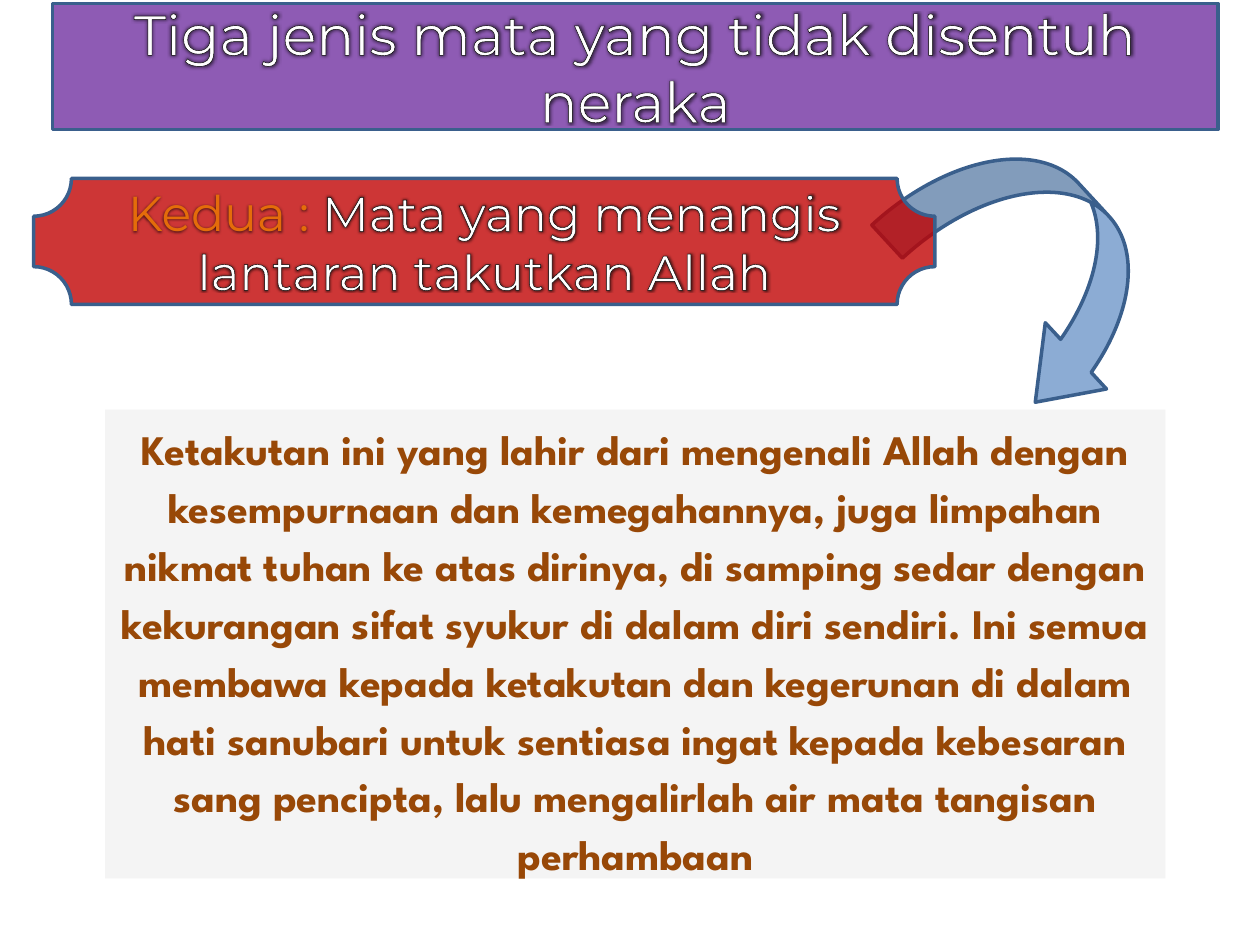
from lxml.etree import SubElement
from pptx import Presentation
from pptx.dml.color import RGBColor
from pptx.enum.shapes import MSO_SHAPE as Shape
from pptx.enum.text import MSO_ANCHOR as Anchor, MSO_AUTO_SIZE as AutoSize, PP_ALIGN as Align
from pptx.oxml import parse_xml
from pptx.oxml.ns import nsdecls, qn
from pptx.util import Pt

# Content
HEADING = "Tiga jenis mata yang tidak disentuh neraka"
KIND_LABEL, KIND_TEXT = "Kedua : ", "Mata yang menangis lantaran takutkan Allah"
EXPLANATION = (
    "Ketakutan ini yang lahir dari mengenali Allah dengan kesempurnaan dan kemegahannya, "
    "juga limpahan nikmat tuhan ke atas dirinya, di samping sedar dengan kekurangan sifat "
    "syukur di dalam diri sendiri. Ini semua membawa kepada ketakutan dan kegerunan di dalam "
    "hati sanubari untuk sentiasa ingat kepada kebesaran sang pencipta, lalu mengalirlah air "
    "mata tangisan perhambaan"
)

THEME = {
    "heading_font": "Montserrat", "body_font": "League Spartan",
    "heading_size": 32, "kind_size": 28, "body_size": 24,
    "purple": "7030A0", "red": "C00000", "blue": "4F81BD", "panel": "F2F2F2",
    "border": "3A5F8C", "white": "FFFFFF", "orange": "E46C0A", "brown": "984807",
    "outline": "000000",
}

# Left, top, width, height in points
SLIDE_SIZE = (720, 540)
HEADING_BOX = (30, 2, 666, 72)
KIND_BOX = (19.25, 102, 515, 72)
ARROW_BOX = (540, 72, 103, 163.5)
PANEL_BOX = (60, 234, 606, 275)


def place(shape, box):
    shape.left, shape.top, shape.width, shape.height = map(Pt, box)


def paint(shape, color, opacity, border=None):
    shape.fill.solid()
    shape.fill.fore_color.rgb = RGBColor.from_string(THEME[color])
    tint = shape.fill._xPr.find(f".//{qn('a:srgbClr')}")
    SubElement(tint, qn("a:alpha"), val=str(opacity * 1000))
    if border:
        shape.line.color.rgb = RGBColor.from_string(THEME[border])
        shape.line.width = Pt(2)


def write(paragraph, text, *, font, size, color, bold=False, outlined=False):
    run = paragraph.add_run()
    run.text = text
    run.font.name, run.font.size, run.font.bold = THEME[font], Pt(THEME[size]), bold
    run.font.color.rgb = RGBColor.from_string(THEME[color])
    if outlined:
        props = run._r.get_or_add_rPr()
        ink = f'<a:srgbClr val="{THEME["outline"]}"'
        props.insert(0, parse_xml(
            f'<a:ln {nsdecls("a")} w="{Pt(0.75)}"><a:solidFill>{ink}/></a:solidFill></a:ln>'))
        props.insert(2, parse_xml(
            f'<a:effectLst {nsdecls("a")}><a:glow rad="{Pt(3)}">{ink}>'
            '<a:alpha val="60000"/></a:srgbClr></a:glow></a:effectLst>'))


def centre(shape, anchor, auto_size=AutoSize.NONE):
    frame = shape.text_frame
    frame.word_wrap, frame.auto_size, frame.vertical_anchor = True, auto_size, anchor
    frame.paragraphs[0].alignment = Align.CENTER
    return frame.paragraphs[0]


def add_shape(slide, preset, box):
    shape = slide.shapes.add_shape(preset, *map(Pt, box))
    shape.shadow.inherit = False
    return shape


def main():
    deck = Presentation()
    deck.slide_width, deck.slide_height = map(Pt, SLIDE_SIZE)
    slide = deck.slides.add_slide(deck.slide_layouts[1])
    heading, panel = slide.placeholders

    # Heading: the title placeholder shaped as a plaque
    place(heading, HEADING_BOX)
    heading._element.spPr.append(parse_xml(
        f'<a:prstGeom {nsdecls("a")} prst="plaque"><a:avLst>'
        '<a:gd name="adj" fmla="val 50000"/></a:avLst></a:prstGeom>'))
    paint(heading, "purple", 79, "border")
    write(centre(heading, Anchor.MIDDLE), HEADING, font="heading_font",
          size="heading_size", color="white", outlined=True)

    # Explanation panel
    place(panel, PANEL_BOX)
    paint(panel, "panel", 83)
    explanation = centre(panel, Anchor.TOP, AutoSize.SHAPE_TO_FIT_TEXT)
    layout = explanation._p.get_or_add_pPr()
    for key, value in {"marL": "0", "indent": "0", "rtl": "1"}.items():
        layout.set(key, value)
    SubElement(layout, qn("a:buNone"))
    explanation.line_spacing = 1.15
    explanation.space_before, explanation.space_after = Pt(0), Pt(8)
    write(explanation, EXPLANATION, font="body_font", size="body_size",
          color="brown", bold=True)

    # Arrow from the second kind to its explanation
    arrow = add_shape(slide, Shape.CURVED_LEFT_ARROW, ARROW_BOX)
    arrow.rotation = 317.3
    arrow.adjustments[2] = 0.34
    paint(arrow, "blue", 65, "border")

    # Second kind
    kind = add_shape(slide, Shape.PLAQUE, KIND_BOX)
    kind.adjustments[0] = 0.3
    paint(kind, "red", 79, "border")
    kind_line = centre(kind, Anchor.MIDDLE)
    for text, color in ((KIND_LABEL, "orange"), (KIND_TEXT, "white")):
        write(kind_line, text, font="heading_font", size="kind_size",
              color=color, outlined=True)

    deck.save("out.pptx")


if __name__ == "__main__":
    main()
